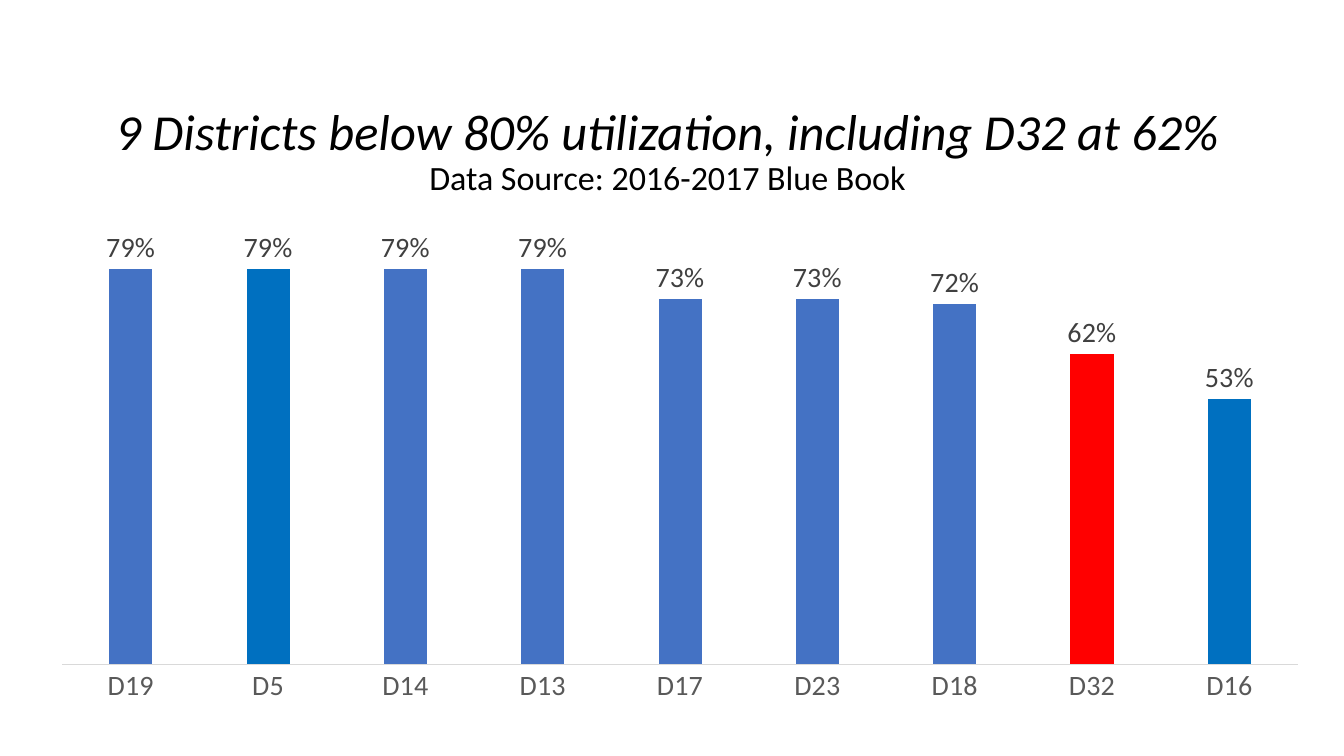
from pptx import Presentation
from pptx.chart.data import CategoryChartData
from pptx.dml.color import RGBColor
from pptx.enum.chart import XL_CHART_TYPE as ChartType, XL_LABEL_POSITION as LabelPos, XL_TICK_MARK as Tick
from pptx.enum.text import MSO_ANCHOR as Anchor, PP_ALIGN as Align
from pptx.oxml import parse_xml
from pptx.oxml.ns import nsdecls
from pptx.util import Inches, Pt

COLORS = {"ink": "000000", "bar": "4472C4", "accent": "0070C0", "alert": "FF0000",
          "axis": "D9D9D9", "category": "595959", "value": "404040"}
UTILIZATION = {"D19": 0.79, "D5": 0.79, "D14": 0.79, "D13": 0.79, "D17": 0.73,
               "D23": 0.73, "D18": 0.72, "D32": 0.62, "D16": 0.53}
HIGHLIGHTS = {"D5": "accent", "D32": "alert", "D16": "accent"}
PLOT_AREA = {"x": 0.018, "y": 0.025, "w": 0.976, "h": 0.848}


def color(name):
    return RGBColor.from_string(COLORS[name])


def style_font(font, size, ink="ink", italic=False):
    font.name = "Calibri"
    font.size = Pt(size)
    font.italic = italic
    font.color.rgb = color(ink)


def write(paragraph, text, **style):
    paragraph.alignment = Align.CENTER
    paragraph.line_spacing = 0.9
    run = paragraph.add_run()
    run.text = text
    style_font(run.font, **style)


class DistrictSlide:
    """Holds the slide and draws its heading and utilization chart."""

    def __init__(self, deck):
        self.slide = deck.slides.add_slide(deck.slide_layouts[6])

    def heading(self, lines, left, top, width, height):
        box = self.slide.shapes.add_textbox(Inches(left), Inches(top), Inches(width), Inches(height))
        frame = box.text_frame
        frame.word_wrap = True
        frame.vertical_anchor = Anchor.TOP
        frame.margin_top = frame.margin_bottom = 0
        for index, (text, style) in enumerate(lines):
            paragraph = frame.add_paragraph() if index else frame.paragraphs[0]
            write(paragraph, text, **style)

    def columns(self, values, highlights, left, top, width, height):
        data = CategoryChartData(number_format="0%")
        data.categories = list(values)
        data.add_series("Series 1", list(values.values()))
        chart = self.slide.shapes.add_chart(
            ChartType.COLUMN_CLUSTERED, Inches(left), Inches(top), Inches(width), Inches(height), data).chart
        chart.has_title = chart.has_legend = False
        style_font(chart.font, 10)

        districts = chart.category_axis
        districts.major_tick_mark = districts.minor_tick_mark = Tick.NONE
        style_font(districts.tick_labels.font, 20, "category")
        districts.format.line.color.rgb = color("axis")
        districts.format.line.width = Pt(0.75)

        scale = chart.value_axis
        scale.minimum_scale, scale.maximum_scale = 0, 0.9
        scale.has_major_gridlines = False
        scale.visible = False

        plot = chart.plots[0]
        plot.gap_width, plot.overlap = 219, -27
        plot.vary_by_categories = False
        bars = plot.series[0]
        bars.format.fill.solid()
        bars.format.fill.fore_color.rgb = color("bar")
        for index, district in enumerate(values):
            if district in highlights:
                fill = bars.points[index].format.fill
                fill.solid()
                fill.fore_color.rgb = color(highlights[district])

        labels = bars.data_labels
        labels.show_value = True
        labels.position = LabelPos.OUTSIDE_END
        labels.number_format, labels.number_format_is_linked = "0%", False
        style_font(labels.font, 20, "value")
        self.place_plot(chart)

    def place_plot(self, chart):
        modes = "".join(f'<c:{side}Mode val="edge"/>' for side in "xy")
        sizes = "".join(f'<c:{side} val="{share}"/>' for side, share in PLOT_AREA.items())
        layout = parse_xml(f'<c:layout {nsdecls("c")}><c:manualLayout><c:layoutTarget val="inner"/>'
                           f'{modes}{sizes}</c:manualLayout></c:layout>')
        plot_area = chart.element.chart.plotArea
        for automatic in plot_area.xpath("c:layout"):
            plot_area.remove(automatic)
        plot_area.insert(0, layout)


def main():
    deck = Presentation()
    deck.slide_width, deck.slide_height = Inches(13.33), Inches(7.5)
    page = DistrictSlide(deck)
    page.heading([
        ("9 Districts below 80% utilization, including D32 at 62%", {"size": 36, "italic": True}),
        ("Data Source: 2016-2017 Blue Book", {"size": 24.3}),
    ], 0.06, 1.06, 13.12, 0.92)
    page.columns(UTILIZATION, HIGHLIGHTS, 0.39, 1.99, 12.56, 5.27)
    deck.save("out.pptx")


if __name__ == "__main__":
    main()
